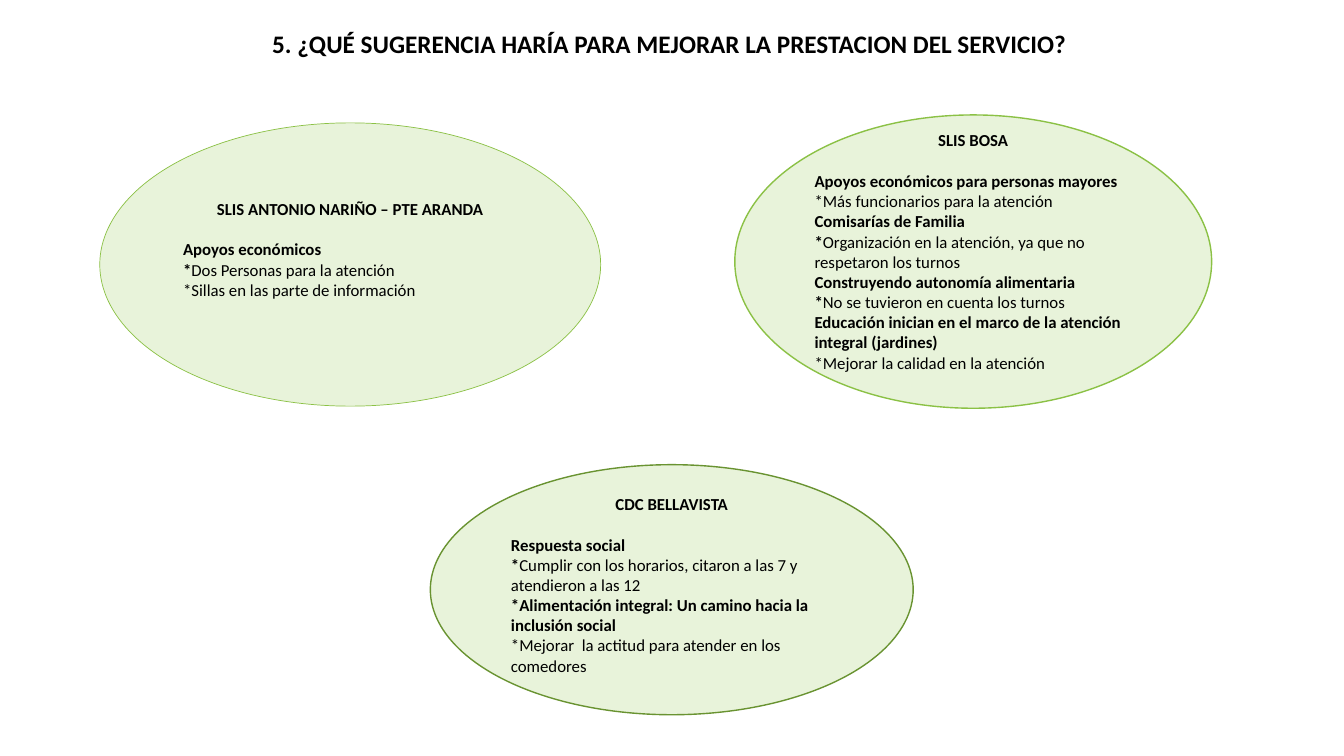
from dataclasses import dataclass

from pptx import Presentation
from pptx.dml.color import RGBColor
from pptx.enum.shapes import MSO_SHAPE
from pptx.enum.text import MSO_ANCHOR, MSO_AUTO_SIZE, PP_ALIGN
from pptx.slide import Slide
from pptx.text.text import TextFrame, _Paragraph
from pptx.util import Pt

ELLIPSE = MSO_SHAPE.OVAL
TOP, MIDDLE = MSO_ANCHOR.TOP, MSO_ANCHOR.MIDDLE
LEFT, CENTER = PP_ALIGN.LEFT, PP_ALIGN.CENTER
NO_AUTOFIT = MSO_AUTO_SIZE.NONE
TITLE_ONLY = 5


@dataclass(frozen=True)
class Theme:
    font: str = "Calibri"
    ink: RGBColor = RGBColor(0, 0, 0)
    fill: RGBColor = RGBColor(0xE8, 0xF3, 0xDA)
    green: RGBColor = RGBColor(0x8B, 0xC1, 0x45)
    dark_green: RGBColor = RGBColor(0x69, 0x93, 0x31)
    title_size: float = 18
    body_size: float = 12
    line_height: float = 14.65
    inset: float = 3.6


THEME = Theme()


@dataclass(frozen=True)
class Entry:
    bold: str = ""
    plain: str = ""


@dataclass(frozen=True)
class Centre:
    name: str
    left: float
    top: float
    width: float
    height: float
    outline: RGBColor
    outline_width: float
    lift: float
    entries: tuple[Entry, ...]


CENTRES = (
    Centre("SLIS ANTONIO NARIÑO – PTE ARANDA", 71.3, 87.8, 357.8, 202.3, THEME.green, 0.5, 22, (
        Entry("Apoyos económicos"),
        Entry("*", "Dos Personas para la atención"),
        Entry(plain="*Sillas en las parte de información"),
    )),
    Centre("SLIS BOSA", 524.9, 82.1, 340.6, 209.5, THEME.green, 1, 14.6, (
        Entry("Apoyos económicos para personas mayores"),
        Entry(plain="*Más funcionarios para la atención"),
        Entry("Comisarías de Familia"),
        Entry("*", "Organización en la atención, ya que no respetaron los turnos"),
        Entry("Construyendo autonomía alimentaria"),
        Entry("*", "No se tuvieron en cuenta los turnos"),
        Entry("Educación inician en el marco de la atención integral (jardines)"),
        Entry(plain="*Mejorar la calidad en la atención"),
    )),
    Centre("CDC BELLAVISTA", 307.4, 331.9, 344.9, 178.6, THEME.dark_green, 1, 7.3, (
        Entry("Respuesta social"),
        Entry("*", "Cumplir con los horarios, citaron a las 7 y atendieron a las 12"),
        Entry("*Alimentación integral: Un camino hacia la inclusión social"),
        Entry(plain="*Mejorar  la actitud para atender en los comedores"),
    )),
)


def format_paragraph(paragraph: _Paragraph, size: float, align: PP_ALIGN) -> None:
    paragraph.alignment = align
    paragraph.font.name = THEME.font
    paragraph.font.size = Pt(size)
    paragraph.font.color.rgb = THEME.ink


def add_entry(frame: TextFrame, entry: Entry) -> None:
    paragraph = frame.add_paragraph()
    format_paragraph(paragraph, THEME.body_size, LEFT)
    mixed = bool(entry.bold and entry.plain)
    if not mixed:
        paragraph.font.bold = bool(entry.bold)
    for text, bold in ((entry.bold, True), (entry.plain, False)):
        if text:
            run = paragraph.add_run()
            run.text = text
            if mixed:
                run.font.bold = bold


def add_centre(slide: Slide, centre: Centre) -> None:
    bubble = slide.shapes.add_shape(
        ELLIPSE, Pt(centre.left), Pt(centre.top), Pt(centre.width), Pt(centre.height))
    bubble.shadow.inherit = False
    bubble.fill.solid()
    bubble.fill.fore_color.rgb = THEME.fill
    bubble.line.color.rgb = centre.outline
    bubble.line.width = Pt(centre.outline_width)

    frame = bubble.text_frame
    frame.word_wrap = True
    frame.vertical_anchor = MIDDLE
    frame.margin_bottom = Pt(THEME.inset + centre.lift)
    heading = frame.paragraphs[0]
    heading.text = centre.name
    format_paragraph(heading, THEME.body_size, CENTER)
    heading.font.bold = True
    heading.space_after = Pt(THEME.line_height)
    for entry in centre.entries:
        add_entry(frame, entry)


def set_title(slide: Slide, text: str) -> None:
    title = slide.shapes.title
    title.left, title.top, title.width, title.height = Pt(187.2), Pt(16.6), Pt(585.4), Pt(28.8)
    frame = title.text_frame
    frame.text = text
    frame.word_wrap = True
    frame.auto_size = NO_AUTOFIT
    frame.vertical_anchor = TOP
    question = frame.paragraphs[0]
    format_paragraph(question, THEME.title_size, LEFT)
    question.font.bold = True


def main() -> None:
    presentation = Presentation()
    presentation.slide_width, presentation.slide_height = Pt(960), Pt(540)
    slide = presentation.slides.add_slide(presentation.slide_layouts[TITLE_ONLY])
    set_title(slide, "5. ¿QUÉ SUGERENCIA HARÍA PARA MEJORAR LA PRESTACION DEL SERVICIO?")
    for centre in CENTRES:
        add_centre(slide, centre)
    presentation.save("out.pptx")


if __name__ == "__main__":
    main()
